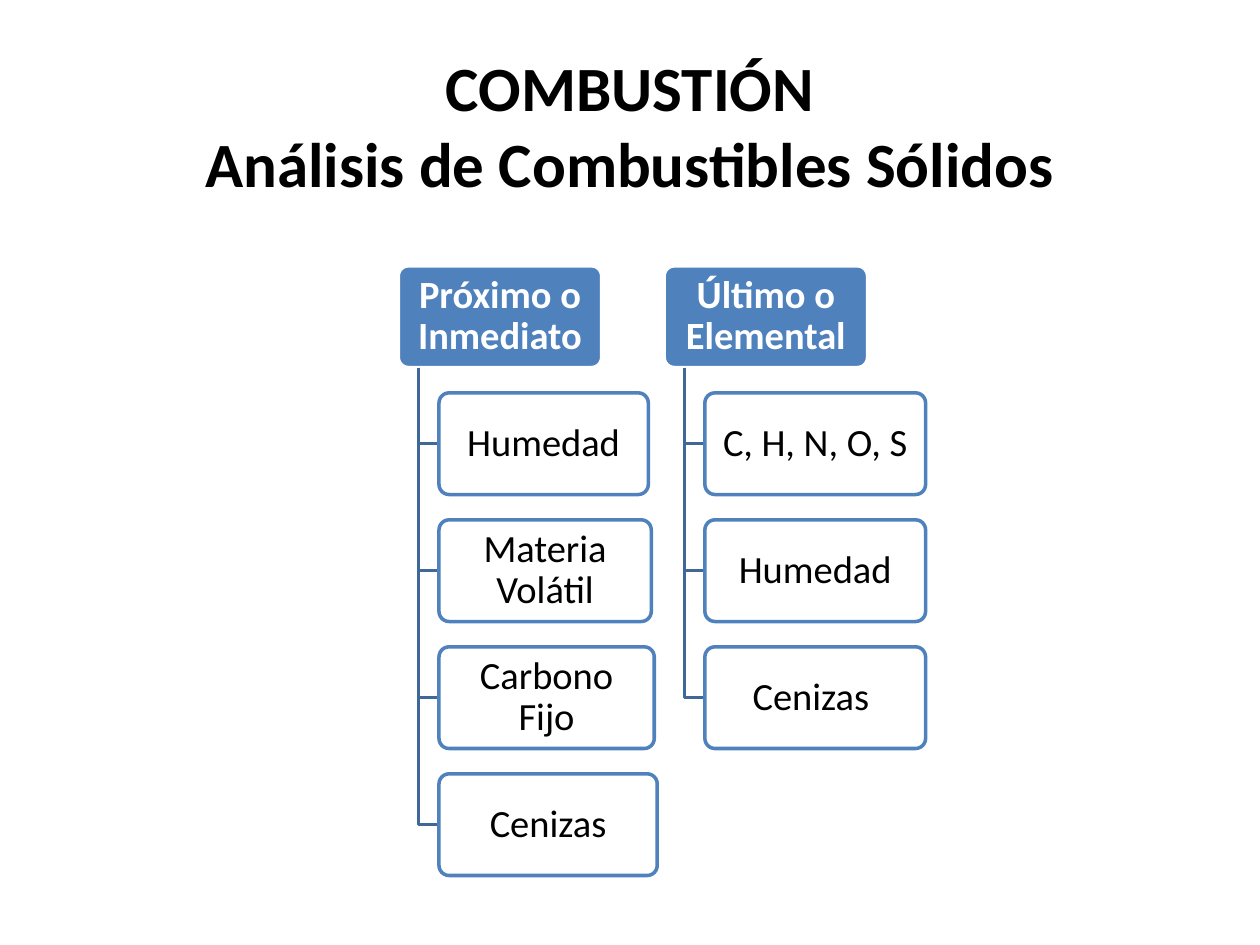
import pptx
import pptx.dml.color
import pptx.enum.shapes
import pptx.enum.text
import pptx.oxml
import pptx.oxml.ns
import pptx.util

Cm = pptx.util.Cm
Pt = pptx.util.Pt
RGBColor = pptx.dml.color.RGBColor

BLACK = RGBColor(0x00, 0x00, 0x00)
WHITE = RGBColor(0xFF, 0xFF, 0xFF)
BLUE = RGBColor(0x4F, 0x81, 0xBD)
DARK_BLUE = RGBColor(0x3F, 0x67, 0x97)

# Lengths in centimetres
TOP = 5.36
BOX_HEIGHT = 2.05
ROW_PITCH = 2.56
HEADER_WIDTH = 4.1
INDENT = 0.82

# Left edge, heading, and (text, box width) of each branch item
BRANCHES = [
    (8.03, "Próximo o Inmediato",
     [("Humedad", 4.22), ("Materia Volátil", 4.28),
      ("Carbono Fijo", 4.34), ("Cenizas", 4.4)]),
    (13.39, "Último o Elemental",
     [("C, H, N, O, S", 4.45), ("Humedad", 4.45), ("Cenizas ", 4.45)]),
]


class Diagram:
    font = "Calibri"
    title_size = Pt(36)
    box_size = Pt(22)
    line_width = Pt(2)

    def __init__(self, slide):
        self.slide = slide

    def run(self, p, text, size, color, bold):
        r = p.add_run()
        r.text = text
        r.font.name = self.font
        r.font.size = size
        r.font.bold = bold
        r.font.color.rgb = color

    def title(self, lines):
        sp = self.slide.shapes.title
        sp.left, sp.top, sp.width, sp.height = Cm(1.27), Cm(0.91), Cm(22.86), Cm(3.18)
        tf = sp.text_frame
        tf.vertical_anchor = pptx.enum.text.MSO_ANCHOR.MIDDLE
        p = tf.paragraphs[0]
        p.alignment = pptx.enum.text.PP_ALIGN.CENTER
        for i, line in enumerate(lines):
            if i:
                p.add_line_break()
            self.run(p, line, self.title_size, BLACK, True)

    def box(self, x, y, width, text, fill, line, color, bold=False, opacity=100):
        sp = self.slide.shapes.add_shape(
            pptx.enum.shapes.MSO_SHAPE.ROUNDED_RECTANGLE,
            Cm(x), Cm(y), Cm(width), Cm(BOX_HEIGHT))
        sp.adjustments[0] = 0.1
        sp.shadow.inherit = False
        sp.fill.solid()
        sp.fill.fore_color.rgb = fill
        if opacity < 100:
            qn = pptx.oxml.ns.qn
            srgb = sp.fill._xPr.find(qn("a:solidFill")).find(qn("a:srgbClr"))
            alpha = srgb.makeelement(qn("a:alpha"), {"val": str(opacity * 1000)})
            srgb.append(alpha)
        sp.line.color.rgb = line
        sp.line.width = self.line_width

        tf = sp.text_frame
        tf.word_wrap = True
        tf.vertical_anchor = pptx.enum.text.MSO_ANCHOR.MIDDLE
        tf.margin_left = tf.margin_right = Cm(0.18)
        tf.margin_top = tf.margin_bottom = Cm(0.13)
        p = tf.paragraphs[0]
        p.alignment = pptx.enum.text.PP_ALIGN.CENTER
        p.line_spacing = 0.9
        self.run(p, text, self.box_size, color, bold)

    def elbow(self, x, y, end_x, end_y):
        """Draw a line down from (x, y), then right to (end_x, end_y)."""
        builder = self.slide.shapes.build_freeform(Cm(x), Cm(y))
        builder.add_line_segments(
            [(Cm(x), Cm(end_y)), (Cm(end_x), Cm(end_y))], close=False)
        sp = builder.convert_to_shape()
        sp.shadow.inherit = False
        sp.fill.background()
        sp.line.color.rgb = DARK_BLUE
        sp.line.width = self.line_width

    def branch(self, x, heading, items):
        self.box(x, TOP, HEADER_WIDTH, heading, BLUE, WHITE, WHITE, bold=True)
        for row, (text, width) in enumerate(items, start=1):
            y = TOP + row * ROW_PITCH
            self.elbow(x + INDENT / 2, TOP + BOX_HEIGHT,
                       x + INDENT, y + BOX_HEIGHT / 2)
            self.box(x + INDENT, y, width, text, WHITE, BLUE, BLACK, opacity=90)


def main():
    prs = pptx.Presentation()
    prs.slide_width, prs.slide_height = Cm(25.4), Cm(19.05)
    s = prs.slides.add_slide(prs.slide_layouts[5])
    diagram = Diagram(s)
    diagram.title(["COMBUSTIÓN", "Análisis de Combustibles Sólidos"])
    for x, heading, items in BRANCHES:
        diagram.branch(x, heading, items)
    prs.save("out.pptx")


if __name__ == "__main__":
    main()
